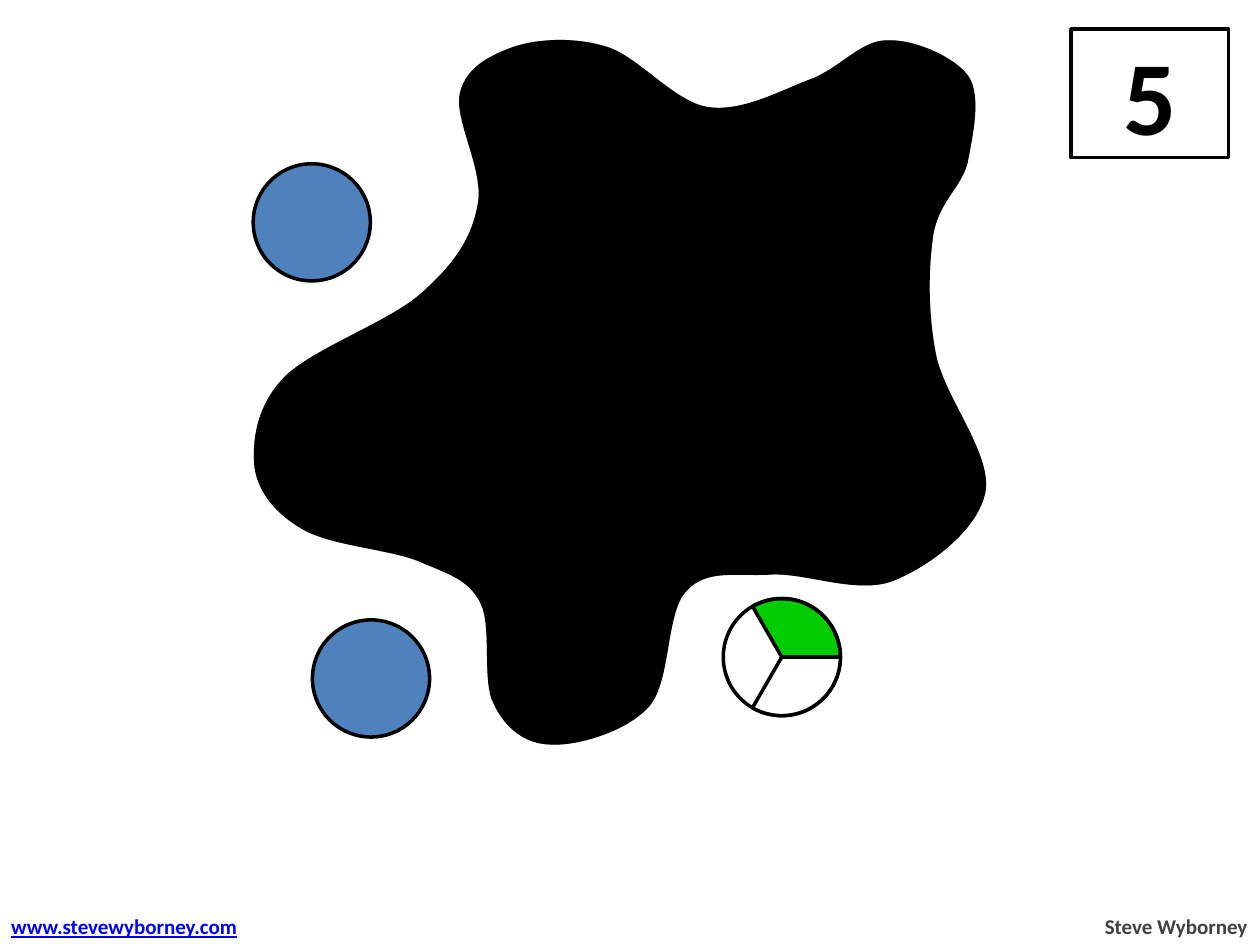
from typing import NamedTuple, Optional

import pptx
import pptx.dml.color
import pptx.enum.shapes
import pptx.enum.text
import pptx.oxml
import pptx.oxml.ns
import pptx.util

Inches = pptx.util.Inches
Pt = pptx.util.Pt
Preset = pptx.enum.shapes.MSO_SHAPE
Align = pptx.enum.text.PP_ALIGN
qn = pptx.oxml.ns.qn

BLACK, WHITE, GREEN, BLUE = "000000", "FFFFFF", "00CC00", "4F81BD"
GREY, LINK_BLUE = "404040", "0000FF"
DIAMETER = 0.93
THIRD = 72.0  # pie end angle of 120 degrees, in the preset's units


class Spot(NamedTuple):
    left: float
    top: float


class Layer(NamedTuple):
    preset: int
    rotation: int
    fill: Optional[str]
    line: Optional[str]


class Caption(NamedTuple):
    text: str
    left: float
    width: float
    color: str
    align: int
    underline: bool


WHOLES = [Spot(2.01, 1.3), Spot(4.18, 4.29), Spot(2.48, 4.92)]
THIRDS = [Spot(2.7, 3.02), Spot(6.06, 3.23), Spot(6.14, 1.06),
          Spot(4.31, 1.24), Spot(4.65, 2.65), Spot(5.74, 4.75)]

# A disc cut in three parts with one part green
THIRD_LAYERS = [
    Layer(Preset.OVAL, 0, WHITE, None),
    Layer(Preset.PIE, 240, GREEN, None),
    Layer(Preset.OVAL, 180, None, BLACK),
    Layer(Preset.PIE, 240, None, BLACK),
    Layer(Preset.PIE, 0, WHITE, BLACK),
]

CAPTIONS = [
    Caption("Steve Wyborney", 8.66, 1.34, GREY, Align.RIGHT, False),
    Caption("www.stevewyborney.com", -0.01, 2.05, LINK_BLUE, Align.LEFT, True),
]

# Splat outline: start point, then two control points and an end per curve
SPLAT_START = (2.4, 4.2)
SPLAT_CURVES = [
    (2.19, 4.08, 2.05, 3.91, 2.02, 3.71),
    (2, 3.51, 2.03, 3.23, 2.25, 3),
    (2.47, 2.77, 3.08, 2.56, 3.34, 2.33),
    (3.6, 2.1, 3.74, 1.9, 3.79, 1.63),
    (3.85, 1.36, 3.6, 0.95, 3.65, 0.74),
    (3.7, 0.53, 3.89, 0.44, 4.08, 0.37),
    (4.27, 0.31, 4.55, 0.29, 4.81, 0.37),
    (5.06, 0.44, 5.35, 0.81, 5.62, 0.85),
    (5.89, 0.89, 6.19, 0.72, 6.43, 0.63),
    (6.67, 0.54, 6.83, 0.32, 7.04, 0.32),
    (7.25, 0.31, 7.58, 0.45, 7.69, 0.61),
    (7.79, 0.77, 7.72, 1.08, 7.68, 1.29),
    (7.63, 1.49, 7.46, 1.59, 7.41, 1.85),
    (7.37, 2.1, 7.36, 2.47, 7.43, 2.82),
    (7.5, 3.16, 7.88, 3.61, 7.82, 3.91),
    (7.76, 4.21, 7.37, 4.5, 7.09, 4.61),
    (6.81, 4.72, 6.41, 4.55, 6.13, 4.56),
    (5.86, 4.58, 5.61, 4.51, 5.45, 4.69),
    (5.28, 4.86, 5.33, 5.41, 5.15, 5.61),
    (4.97, 5.81, 4.58, 5.92, 4.38, 5.91),
    (4.17, 5.91, 4.01, 5.78, 3.92, 5.59),
    (3.82, 5.41, 3.91, 4.97, 3.81, 4.78),
    (3.71, 4.59, 3.54, 4.55, 3.31, 4.45),
    (3.08, 4.36, 2.62, 4.33, 2.4, 4.2),
]


def rgb(value: str) -> pptx.dml.color.RGBColor:
    return pptx.dml.color.RGBColor.from_string(value)


def paint(shape, fill: Optional[str], line: Optional[str]) -> None:
    shape.shadow.inherit = False
    for part, color in ((shape.fill, fill), (shape.line.fill, line)):
        if color is None:
            part.background()
        else:
            part.solid()
            part.fore_color.rgb = rgb(color)
    if line is not None:
        shape.line.width = Pt(2)


def write(shape, text: str, size: int, color: str, align: int,
          underline: bool = False) -> None:
    paragraph = shape.text_frame.paragraphs[0]
    paragraph.alignment = align
    run = paragraph.add_run()
    run.text = text
    style = {"name": "Calibri", "size": Pt(size), "bold": True,
             "underline": underline}
    for name, value in style.items():
        setattr(run.font, name, value)
    run.font.color.rgb = rgb(color)


def draw_answer(shapes, answer: str) -> None:
    frame = shapes.add_shape(Preset.RECTANGLE, Inches(8.5), Inches(0.23),
                             Inches(1.25), Inches(1.02))
    paint(frame, WHITE, BLACK)
    frame.text_frame.vertical_anchor = pptx.enum.text.MSO_ANCHOR.MIDDLE
    write(frame, answer, 60, BLACK, Align.CENTER)


def draw_caption(shapes, caption: Caption) -> None:
    box = shapes.add_textbox(Inches(caption.left), Inches(7.2),
                             Inches(caption.width), Inches(0.3))
    box.text_frame.word_wrap = False
    box.text_frame.auto_size = pptx.enum.text.MSO_AUTO_SIZE.SHAPE_TO_FIT_TEXT
    write(box, caption.text, 12, caption.color, caption.align,
          caption.underline)


def draw_layer(shapes, spot: Spot, layer: Layer) -> None:
    disc = shapes.add_shape(layer.preset, Inches(spot.left), Inches(spot.top),
                            Inches(DIAMETER), Inches(DIAMETER))
    if layer.preset == Preset.PIE:
        disc.adjustments[0] = 0
        disc.adjustments[1] = THIRD
    disc.rotation = layer.rotation
    paint(disc, layer.fill, layer.line)


def draw_thirds(shapes, spot: Spot) -> None:
    group = shapes.add_group_shape()
    for layer in THIRD_LAYERS:
        draw_layer(group.shapes, spot, layer)


def draw_splat(shapes, opacity: int) -> None:
    builder = shapes.build_freeform(*map(Inches, SPLAT_START))
    builder.add_line_segments(
        [(Inches(curve[i]), Inches(curve[i + 1]))
         for curve in SPLAT_CURVES for i in (0, 2, 4)], close=True)
    splat = builder.convert_to_shape()
    paint(splat, BLACK, None)

    # Turn every three straight segments into one cubic curve
    segments = list(splat._element.iter(qn("a:lnTo")))
    for first, second, third in zip(*[iter(segments)] * 3):
        curve = pptx.oxml.parse_xml(
            f'<a:cubicBezTo {pptx.oxml.ns.nsdecls("a")}/>')
        first.addprevious(curve)
        for segment in (first, second, third):
            curve.append(segment[0])
            segment.getparent().remove(segment)

    if opacity < 100:
        color = splat._element.spPr.find(qn("a:solidFill"))[0]
        color.append(pptx.oxml.parse_xml(
            f'<a:alpha {pptx.oxml.ns.nsdecls("a")} val="{opacity * 1000}"/>'))


def main() -> None:
    deck = pptx.Presentation()
    deck.slide_width, deck.slide_height = Inches(10), Inches(7.5)
    shapes = deck.slides.add_slide(deck.slide_layouts[6]).shapes

    # Answer and credits
    draw_answer(shapes, "5")
    for caption in CAPTIONS:
        draw_caption(shapes, caption)

    # Whole and one-third discs
    for spot in WHOLES:
        draw_layer(shapes, spot, Layer(Preset.OVAL, 0, BLUE, BLACK))
    for spot in THIRDS:
        draw_thirds(shapes, spot)

    # Solid splat with a translucent one over it
    for opacity in (100, 40):
        draw_splat(shapes, opacity)

    deck.save("out.pptx")


if __name__ == "__main__":
    main()
